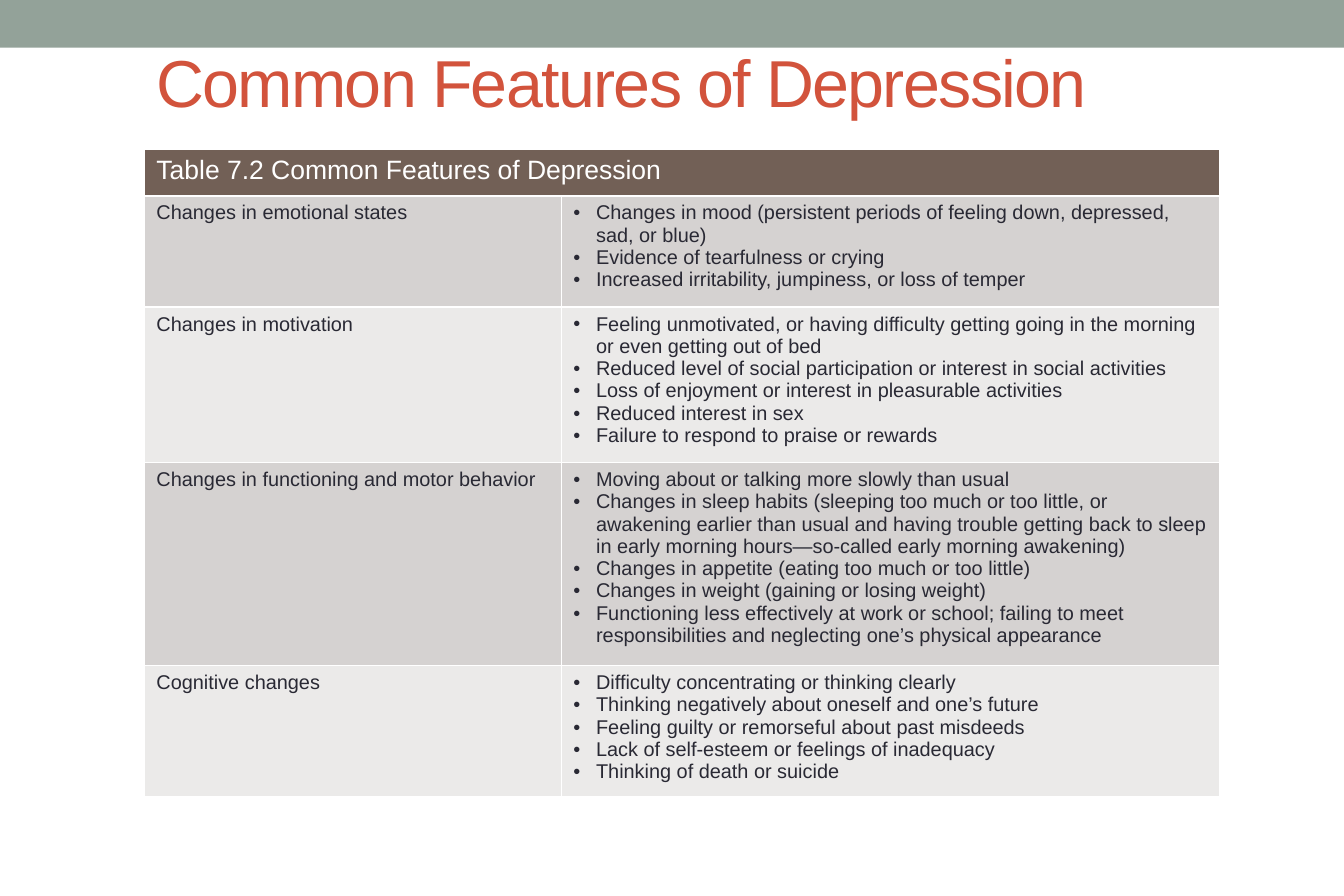
"""Build the slide on common features of depression."""
from lxml import etree
from pptx import Presentation
from pptx import util as u
from pptx.dml.color import RGBColor
from pptx.enum import shapes, text
from pptx.oxml import ns

SAGE = RGBColor(0x93, 0xA2, 0x99)
RED = RGBColor(0xD2, 0x53, 0x3C)
BROWN = RGBColor(0x72, 0x60, 0x56)
DARK_BAND = RGBColor(0xD5, 0xD2, 0xD1)
LIGHT_BAND = RGBColor(0xEB, 0xEA, 0xE9)
INK = RGBColor(0x29, 0x29, 0x34)
WHITE = RGBColor(0xFF, 0xFF, 0xFF)

HEADING = "Table 7.2 Common Features of Depression"
FEATURES = [
    ("Changes in emotional states", [
        "Changes in mood (persistent periods of feeling down, depressed, sad, or blue)",
        "Evidence of tearfulness or crying",
        "Increased irritability, jumpiness, or loss of temper",
    ]),
    ("Changes in motivation", [
        "Feeling unmotivated, or having difficulty getting going in the morning "
        "or even getting out of bed",
        "Reduced level of social participation or interest in social activities",
        "Loss of enjoyment or interest in pleasurable activities",
        "Reduced interest in sex",
        "Failure to respond to praise or rewards",
    ]),
    ("Changes in functioning and motor behavior", [
        "Moving about or talking more slowly than usual",
        "Changes in sleep habits (sleeping too much or too little, or awakening "
        "earlier than usual and having trouble getting back to sleep in early "
        "morning hours—so-called early morning awakening)",
        "Changes in appetite (eating too much or too little)",
        "Changes in weight (gaining or losing weight)",
        "Functioning less effectively at work or school; failing to meet "
        "responsibilities and neglecting one’s physical appearance",
    ]),
    ("Cognitive changes", [
        "Difficulty concentrating or thinking clearly",
        "Thinking negatively about oneself and one’s future",
        "Feeling guilty or remorseful about past misdeeds",
        "Lack of self-esteem or feelings of inadequacy",
        "Thinking of death or suicide",
    ]),
]
COLUMN_WIDTHS = [3.49, 5.51]
ROW_HEIGHTS = [0.39, 0.93, 1.22, 1.7, 1.06]


def style_font(paragraph, size, color):
    paragraph.font.name = "Arial"
    paragraph.font.size = u.Pt(size)
    paragraph.font.bold = False
    paragraph.font.color.rgb = color


def fill_cell(cell, lines, size, color, fill, bulleted=False):
    cell.text = "\n".join(lines)
    for paragraph in cell.text_frame.paragraphs:
        style_font(paragraph, size, color)
        if bulleted:
            properties = paragraph._p.get_or_add_pPr()
            properties.set("marL", str(u.Inches(0.19)))
            properties.set("indent", str(u.Inches(-0.19)))
            etree.SubElement(properties, ns.qn("a:buFont")).set("typeface", "Arial")
            etree.SubElement(properties, ns.qn("a:buChar")).set("char", "•")
    cell_properties = cell._tc.get_or_add_tcPr()
    for side in ("a:lnL", "a:lnR", "a:lnT", "a:lnB"):
        border = etree.SubElement(cell_properties, ns.qn(side), w=str(u.Pt(1)))
        border_fill = etree.SubElement(border, ns.qn("a:solidFill"))
        etree.SubElement(border_fill, ns.qn("a:srgbClr"), val=str(WHITE))
    cell.fill.solid()
    cell.fill.fore_color.rgb = fill


presentation = Presentation()
presentation.slide_width = u.Inches(11.25)
presentation.slide_height = u.Inches(7.5)
slide = presentation.slides.add_slide(presentation.slide_layouts[6])

top_band = slide.shapes.add_shape(
    shapes.MSO_SHAPE.RECTANGLE, 0, 0, presentation.slide_width, u.Inches(0.4))
top_band.shadow.inherit = False
top_band.fill.solid()
top_band.fill.fore_color.rgb = SAGE
top_band.line.fill.background()

title = slide.shapes.add_textbox(
    u.Inches(1.21), u.Inches(0.25), u.Inches(9), u.Inches(0.85))
title.text_frame.word_wrap = True
title.text_frame.vertical_anchor = text.MSO_ANCHOR.MIDDLE
title_paragraph = title.text_frame.paragraphs[0]
title_run = title_paragraph.add_run()
title_run.text = "Common Features of Depression"
style_font(title_paragraph, 40, RED)
title_run._r.get_or_add_rPr().set("spc", "-100")

table = slide.shapes.add_table(
    len(ROW_HEIGHTS), len(COLUMN_WIDTHS), u.Inches(1.21), u.Inches(1.25),
    u.Inches(sum(COLUMN_WIDTHS)), u.Inches(sum(ROW_HEIGHTS))).table
for column, width in zip(table.columns, COLUMN_WIDTHS):
    column.width = u.Inches(width)
for row, height in zip(table.rows, ROW_HEIGHTS):
    row.height = u.Inches(height)

table.cell(0, 0).merge(table.cell(0, 1))
fill_cell(table.cell(0, 0), [HEADING], 16, WHITE, BROWN)
for row_index, (category, examples) in enumerate(FEATURES, start=1):
    band = DARK_BAND if row_index % 2 else LIGHT_BAND
    fill_cell(table.cell(row_index, 0), [category], 12, INK, band)
    fill_cell(table.cell(row_index, 1), examples, 12, INK, band, bulleted=True)

presentation.save("out.pptx")
